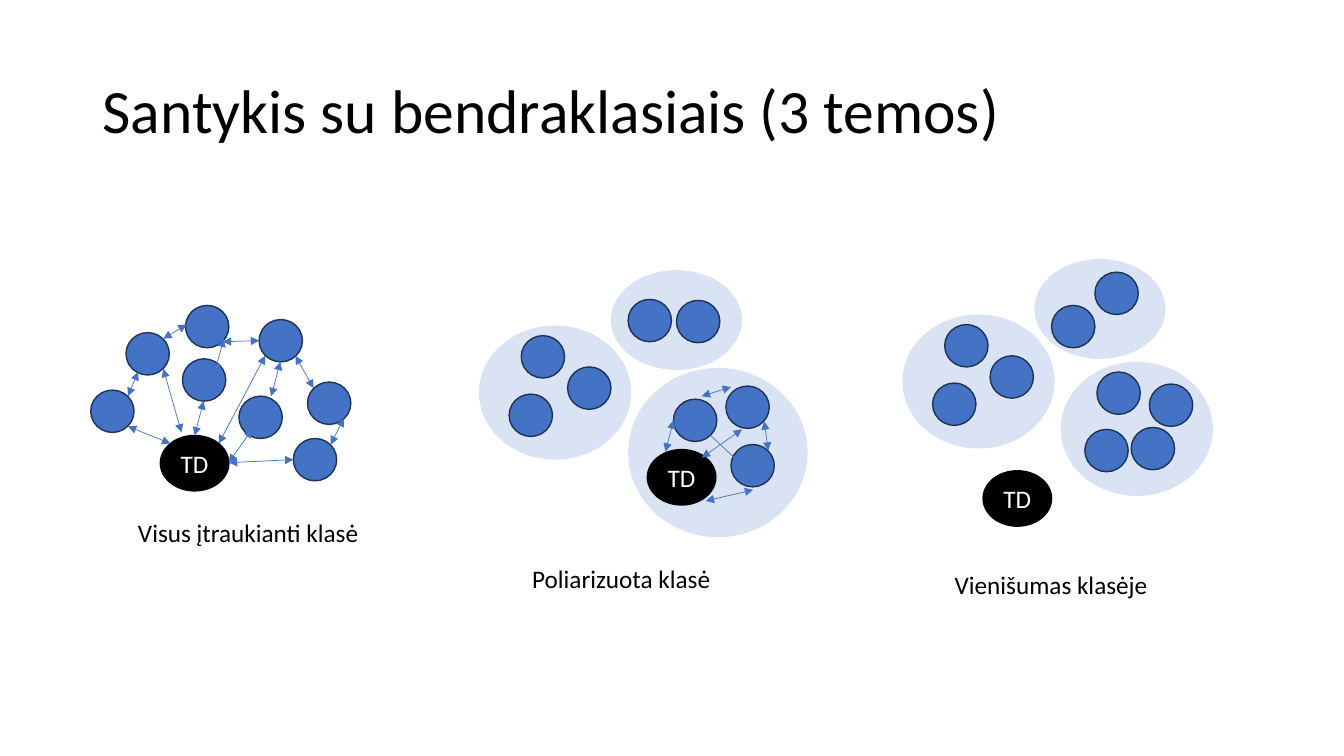
from pptx import Presentation
from pptx.dml.color import RGBColor
from pptx.enum.shapes import MSO_CONNECTOR as Link, MSO_SHAPE as Form
from pptx.enum.text import MSO_ANCHOR as Anchor, PP_ALIGN as Align
from pptx.oxml.ns import qn
from pptx.util import Pt
from lxml.etree import SubElement as add

BLACK = RGBColor(0x00, 0x00, 0x00)
WHITE = RGBColor(0xFF, 0xFF, 0xFF)
BLUE = RGBColor(0x44, 0x72, 0xC4)
NAVY = RGBColor(0x1E, 0x32, 0x56)
PALE = RGBColor(0xDA, 0xE3, 0xF3)

PX = 9144
WIDTH, HEIGHT = 1333, 750
PUPIL = (43, 42)
TEACHER = (68, 55)
CAPTION = (248, 40)

ROOMS = [
    {
        "name": "Visus įtraukianti klasė",
        "label": (127, 508),
        "td": (159, 432),
        "crowds": [],
        "pupils": [(184, 303), (125, 330), (181, 356), (90, 387), (257, 317),
                   (237, 393), (305, 379), (291, 435)],
        "ties": [(127, 423, 169, 440), (202, 398, 193, 432),
                 (250, 426, 227, 459), (291, 456, 227, 459),
                 (263, 353, 217, 440), (162, 366, 180, 429),
                 (221, 339, 257, 338), (185, 322, 162, 336),
                 (137, 369, 127, 393), (341, 415, 328, 441),
                 (293, 353, 311, 385), (278, 359, 269, 393),
                 (222, 336, 213, 369)],
    },
    {
        "name": "Poliarizuota klasė",
        "label": (518, 554),
        "td": (642, 446),
        "crowds": [(623, 365, 178, 168), (606, 268, 130, 99),
                   (475, 323, 151, 133)],
        "pupils": [(623, 297), (517, 333), (563, 364), (505, 391), (671, 298),
                   (668, 396), (720, 383), (725, 441)],
        "ties": [(747, 486, 700, 497), (668, 417, 660, 448),
                 (736, 426, 696, 454), (762, 447, 758, 418),
                 (725, 384, 696, 393), (740, 465, 692, 420)],
    },
    {
        "name": "Vienišumas klasėje",
        "label": (937, 560),
        "td": (975, 467),
        "crowds": [(1026, 257, 130, 99), (895, 312, 151, 133),
                   (1052, 359, 151, 133)],
        "pupils": [(1043, 303), (937, 322), (982, 353), (925, 380),
                   (1086, 270), (1122, 424), (1088, 369), (1140, 381),
                   (1076, 426)],
        "ties": [],
    },
]


class Board:
    font = "Calibri"

    def __init__(self, slide):
        self.shapes = slide.shapes

    def letter(self, frame, text, size, color, align=Align.LEFT):
        line = frame.paragraphs[0]
        line.text = text
        line.alignment = align
        line.font.name = self.font
        line.font.size = Pt(size)
        line.font.color.rgb = color
        return line

    def label(self, x, y, w, h, text, size=18, anchor=Anchor.TOP):
        box = self.shapes.add_textbox(x * PX, y * PX, w * PX, h * PX)
        frame = box.text_frame
        frame.word_wrap = True
        frame.vertical_anchor = anchor
        return self.letter(frame, text, size, BLACK)

    def oval(self, x, y, w, h, fill, edge=None):
        oval = self.shapes.add_shape(Form.OVAL, x * PX, y * PX, w * PX, h * PX)
        oval.shadow.inherit = False
        oval.fill.solid()
        oval.fill.fore_color.rgb = fill
        if edge is None:
            oval.line.fill.background()
        else:
            oval.line.color.rgb = edge
            oval.line.width = Pt(1)
        return oval

    def teacher(self, x, y):
        frame = self.oval(x, y, *TEACHER, BLACK, BLACK).text_frame
        frame.vertical_anchor = Anchor.MIDDLE
        self.letter(frame, "TD", 18, WHITE, Align.CENTER)

    def tie(self, *ends):
        tie = self.shapes.add_connector(Link.STRAIGHT, *(n * PX for n in ends))
        tie.line.color.rgb = BLUE
        tie.line.width = Pt(0.5)
        props = tie._element.spPr
        for end in ("a:headEnd", "a:tailEnd"):
            add(props.find(qn("a:ln")), qn(end), type="triangle")
        add(props, qn("a:effectLst"))

    def room(self, name, label, td, crowds, pupils, ties):
        for crowd in crowds:
            self.oval(*crowd, PALE)
        for spot in pupils:
            self.oval(*spot, *PUPIL, BLUE, NAVY)
        self.teacher(*td)
        for ends in ties:
            self.tie(*ends)
        self.label(*label, *CAPTION, name)


def main():
    deck = Presentation()
    deck.slide_width, deck.slide_height = WIDTH * PX, HEIGHT * PX
    board = Board(deck.slides.add_slide(deck.slide_layouts[6]))
    title = board.label(92, 40, 1150, 145,
                        "Santykis su bendraklasiais (3 temos)",
                        44, Anchor.MIDDLE)
    title.line_spacing = 0.9
    for room in ROOMS:
        board.room(**room)
    deck.save("out.pptx")


if __name__ == "__main__":
    main()
